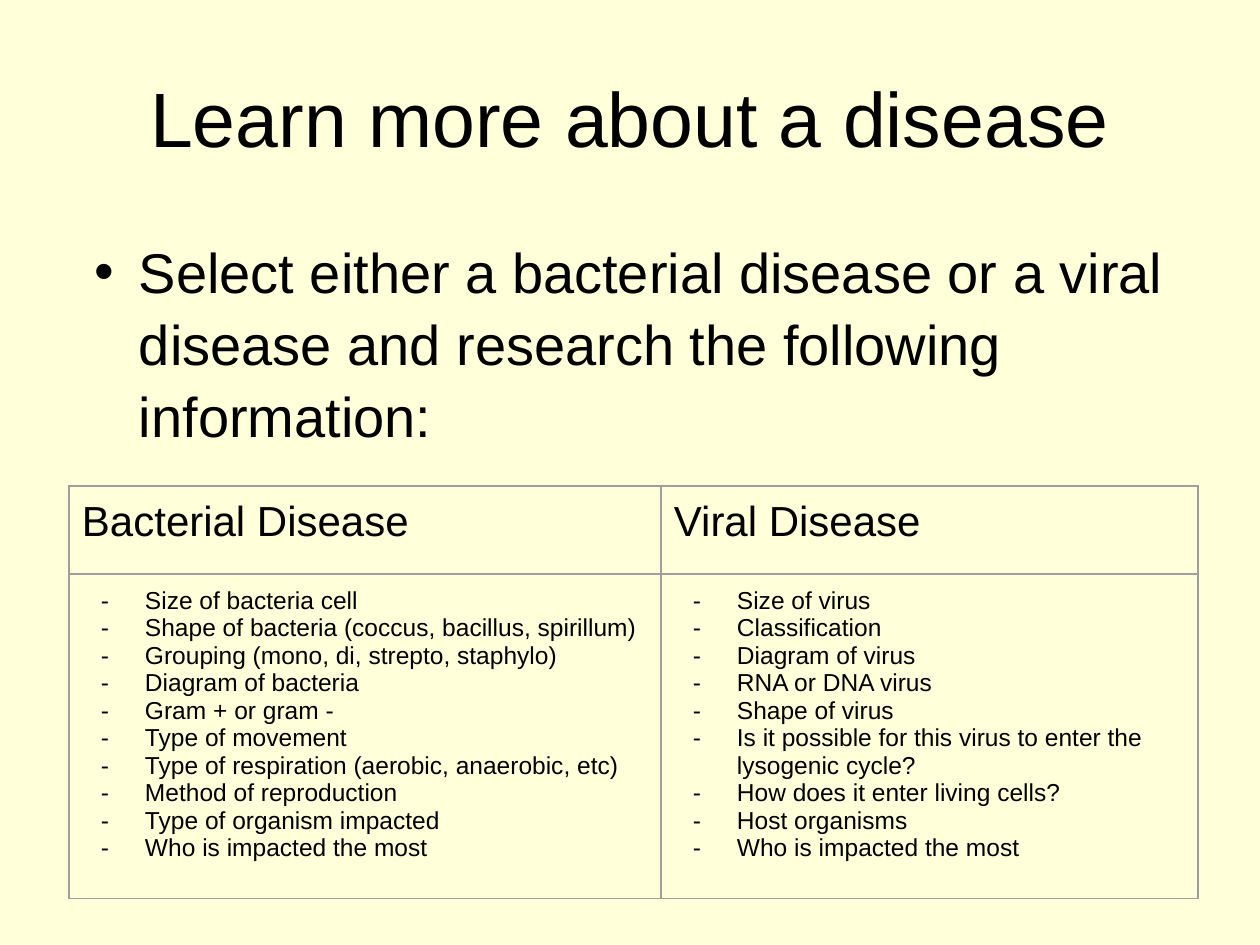
from lxml import etree
from pptx import Presentation
from pptx import util as u
from pptx.dml.color import RGBColor
from pptx.enum import text
from pptx.oxml.ns import qn

EMU_PER_PX = 914400 / 126
CREAM = RGBColor(0xFF, 0xFF, 0xD9)
BLACK = RGBColor(0x00, 0x00, 0x00)
GREY = RGBColor(0x9E, 0x9E, 0x9E)
FONT = "Arial"
INSET, INDENT, HANGING = 13, 63, 44

BACTERIAL = [
    "Size of bacteria cell",
    "Shape of bacteria (coccus, bacillus, spirillum)",
    "Grouping (mono, di, strepto, staphylo)",
    "Diagram of bacteria",
    "Gram + or gram -",
    "Type of movement",
    "Type of respiration (aerobic, anaerobic, etc)",
    "Method of reproduction",
    "Type of organism impacted",
    "Who is impacted the most",
]
VIRAL = [
    "Size of virus",
    "Classification",
    "Diagram of virus",
    "RNA or DNA virus",
    "Shape of virus",
    "Is it possible for this virus to enter the lysogenic cycle?",
    "How does it enter living cells?",
    "Host organisms",
    "Who is impacted the most",
]


def px(length):
    return u.Emu(round(length * EMU_PER_PX))


def write(frame, lines, size, align=text.PP_ALIGN.LEFT, bullet=None,
          before=0, spacing=None):
    """Fill a text frame with one paragraph per line."""
    for number, line in enumerate(lines):
        paragraph = frame.add_paragraph() if number else frame.paragraphs[0]
        paragraph.alignment = align
        paragraph.space_before = u.Pt(before)
        if spacing:
            paragraph.line_spacing = spacing
        run = paragraph.add_run()
        run.text = line
        run.font.name = FONT
        run.font.size = u.Pt(size)
        run.font.color.rgb = BLACK
        if bullet:
            props = paragraph._p.get_or_add_pPr()
            props.set("marL", str(px(INDENT)))
            props.set("indent", str(-px(HANGING)))
            etree.SubElement(props, qn("a:buFont"), typeface=FONT)
            etree.SubElement(props, qn("a:buChar"), char=bullet)


class Deck:
    """Holds the style and the current slide."""

    def __init__(self, width, height):
        self.presentation = Presentation()
        self.presentation.slide_width = px(width)
        self.presentation.slide_height = px(height)
        self.slide = None

    def add_slide(self):
        self.slide = self.presentation.slides.add_slide(
            self.presentation.slide_layouts[6])
        fill = self.slide.background.fill
        fill.solid()
        fill.fore_color.rgb = CREAM

    def text_box(self, box, line, size, anchor=text.MSO_ANCHOR.TOP, **style):
        frame = self.slide.shapes.add_textbox(*map(px, box)).text_frame
        frame.word_wrap = True
        frame.vertical_anchor = anchor
        frame.margin_left = frame.margin_right = px(INSET)
        frame.margin_top = frame.margin_bottom = px(INSET)
        write(frame, [line], size, **style)

    def table(self, left, top, widths, heights):
        table = self.slide.shapes.add_table(
            len(heights), len(widths), px(left), px(top),
            px(sum(widths)), px(sum(heights))).table
        table.first_row = table.horz_banding = False
        for column, width in zip(table.columns, widths):
            column.width = px(width)
        for row, height in zip(table.rows, heights):
            row.height = px(height)
        return table

    def cell(self, cell, lines, size, **style):
        cell.margin_left = cell.margin_right = px(INSET)
        cell.margin_top = cell.margin_bottom = px(INSET)
        write(cell.text_frame, lines, size, **style)
        props = cell._tc.get_or_add_tcPr()
        for side in ("lnL", "lnR", "lnT", "lnB"):
            border = etree.SubElement(props, qn(f"a:{side}"), w=str(u.Pt(0.75)))
            solid = etree.SubElement(border, qn("a:solidFill"))
            etree.SubElement(solid, qn("a:srgbClr"), val=str(GREY))
        cell.fill.background()

    def save(self):
        self.presentation.save("out.pptx")


def main():
    deck = Deck(1260, 945)
    deck.add_slide()

    # Title and task
    deck.text_box((63, 38, 1134, 157), "Learn more about a disease", 44,
                  anchor=text.MSO_ANCHOR.MIDDLE, align=text.PP_ALIGN.CENTER)
    deck.text_box((63, 220, 1134, 624),
                  "Select either a bacterial disease or a viral disease "
                  "and research the following information:",
                  32, bullet="•", before=6.4, spacing=1.07)

    # Research topics, one column per kind of disease
    topics = deck.table(69, 486, widths=(592, 537), heights=(88, 325))
    columns = (("Bacterial Disease", BACTERIAL), ("Viral Disease", VIRAL))
    for number, (heading, items) in enumerate(columns):
        deck.cell(topics.cell(0, number), [heading], 24)
        deck.cell(topics.cell(1, number), items, 14, bullet="-")

    deck.save()


if __name__ == "__main__":
    main()
